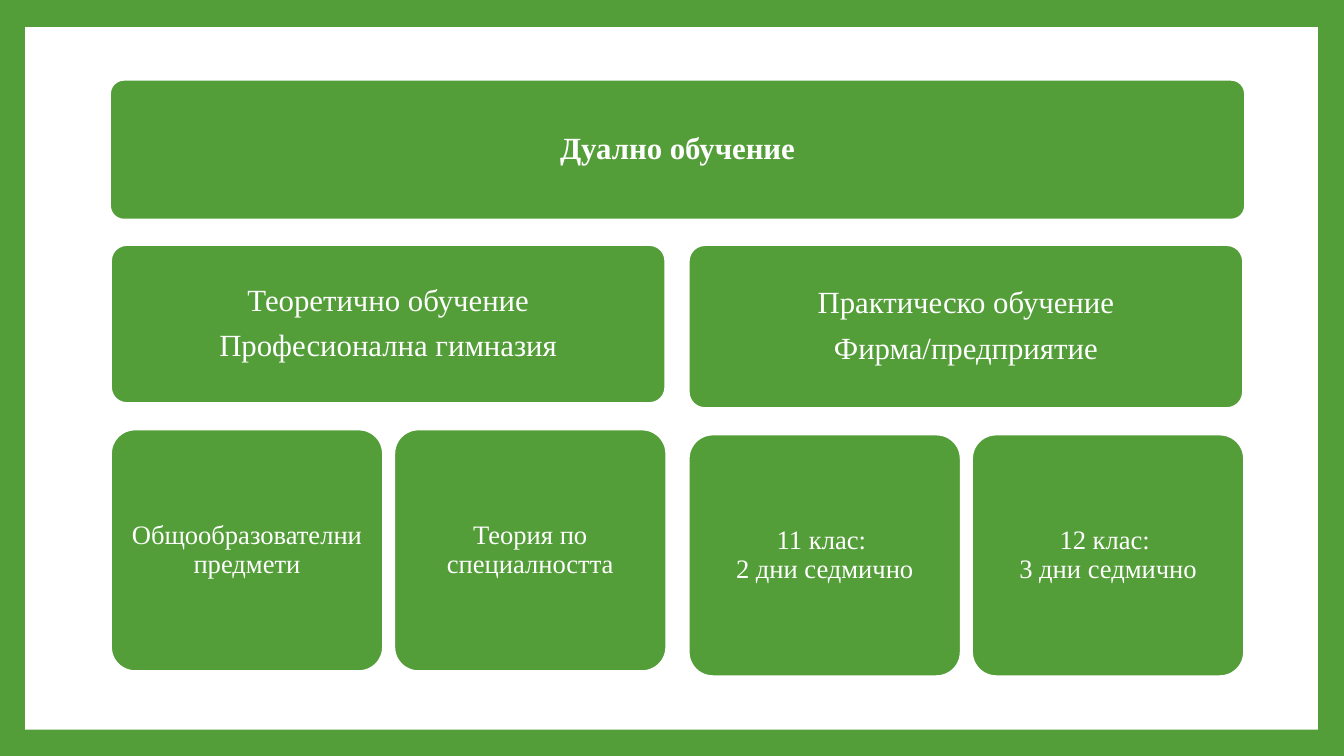
"""Build a slide that shows the structure of dual education as a tree of boxes."""
from dataclasses import dataclass

from pptx import Presentation
from pptx.dml.color import RGBColor
from pptx.enum.shapes import MSO_SHAPE
from pptx.enum.text import MSO_ANCHOR, MSO_AUTO_SIZE, PP_ALIGN
from pptx.util import Emu, Pt

RECTANGLE = MSO_SHAPE.RECTANGLE
ROUNDED = MSO_SHAPE.ROUNDED_RECTANGLE
MIDDLE = MSO_ANCHOR.MIDDLE
NO_FIT = MSO_AUTO_SIZE.NONE
CENTER = PP_ALIGN.CENTER

EMU_PER_PX = 9144
GREEN = "549E39"
WHITE = "FFFFFF"
BRANCH_TOP = 243
BRANCH_WIDTH = 550
ROW_GAP = 26
LEAF_WIDTH = 270
LEAF_HEIGHT = 240
LEAF_PITCH = 281


@dataclass(frozen=True)
class Area:
    left: int
    top: int
    width: int
    height: int


@dataclass(frozen=True)
class Branch:
    left: int
    height: int
    lines: tuple[str, ...]
    leaves: tuple[str, ...]


FRAME = Area(25, 27, 1282, 697)
HEADER = Area(109, 79, 1126, 139)
HEADER_TEXT = Area(113, 83, 1118, 131)
BRANCHES = (
    Branch(110, 157, ("Теоретично обучение", "Професионална гимназия"),
           ("Общообразователни предмети", "Теория по специалността")),
    Branch(683, 162, ("Практическо обучение", "Фирма/предприятие"),
           ("11 клас: \v2 дни седмично", "12 клас: \v3 дни седмично")),
)


def px(length: int) -> Emu:
    return Emu(length * EMU_PER_PX)


def color(value: str) -> RGBColor:
    return RGBColor.from_string(value)


def apply(target, values: dict) -> None:
    for name, value in values.items():
        setattr(target, name, value)


def place(area: Area) -> dict:
    return {"left": px(area.left), "top": px(area.top),
            "width": px(area.width), "height": px(area.height)}


def write(box, lines: tuple[str, ...], size: int, margin: int, bold: bool = False) -> None:
    frame = box.text_frame
    frame.text = "\n".join(lines)
    sides = ("margin_left", "margin_top", "margin_right", "margin_bottom")
    apply(frame, {"word_wrap": True, "auto_size": NO_FIT, "vertical_anchor": MIDDLE}
          | dict.fromkeys(sides, px(margin)))
    for para in frame.paragraphs:
        apply(para, {"alignment": CENTER, "line_spacing": 0.9,
                     "space_before": Pt(0), "space_after": Pt(8.6)})
        for span in para.runs:
            apply(span.font, {"name": "Times New Roman", "size": Pt(size), "bold": bold})
            span.font.color.rgb = color(WHITE)


def add_box(page, area: Area, fill: str = GREEN, kind=ROUNDED):
    box = page.shapes.add_shape(kind, *place(area).values())
    box.shadow.inherit = False
    box.fill.solid()
    box.fill.fore_color.rgb = color(fill)
    box.line.color.rgb = color(WHITE)
    box.line.width = Pt(1.5)
    if kind == ROUNDED:
        box.adjustments[0] = 0.1
    return box


def add_header(page) -> None:
    box = add_box(page, HEADER)
    title = page.shapes.title
    apply(title, place(HEADER_TEXT))
    write(title, ("Дуално обучение",), 22, 9, True)
    box._element.addnext(title._element)


def add_branch(page, branch: Branch) -> None:
    area = Area(branch.left, BRANCH_TOP, BRANCH_WIDTH, branch.height)
    write(add_box(page, area), branch.lines, 22, 9)
    leaf_top = BRANCH_TOP + branch.height + ROW_GAP
    for index, leaf in enumerate(branch.leaves):
        area = Area(branch.left + index * LEAF_PITCH, leaf_top, LEAF_WIDTH, LEAF_HEIGHT)
        write(add_box(page, area), (leaf,), 19, 8)


def main() -> None:
    deck = Presentation()
    apply(deck, {"slide_width": px(1333), "slide_height": px(750)})
    page = deck.slides.add_slide(deck.slide_layouts[5])
    page.background.fill.solid()
    page.background.fill.fore_color.rgb = color(GREEN)
    add_box(page, FRAME, WHITE, RECTANGLE).line.fill.background()
    add_header(page)
    for branch in BRANCHES:
        add_branch(page, branch)
    deck.save("out.pptx")


if __name__ == "__main__":
    main()
